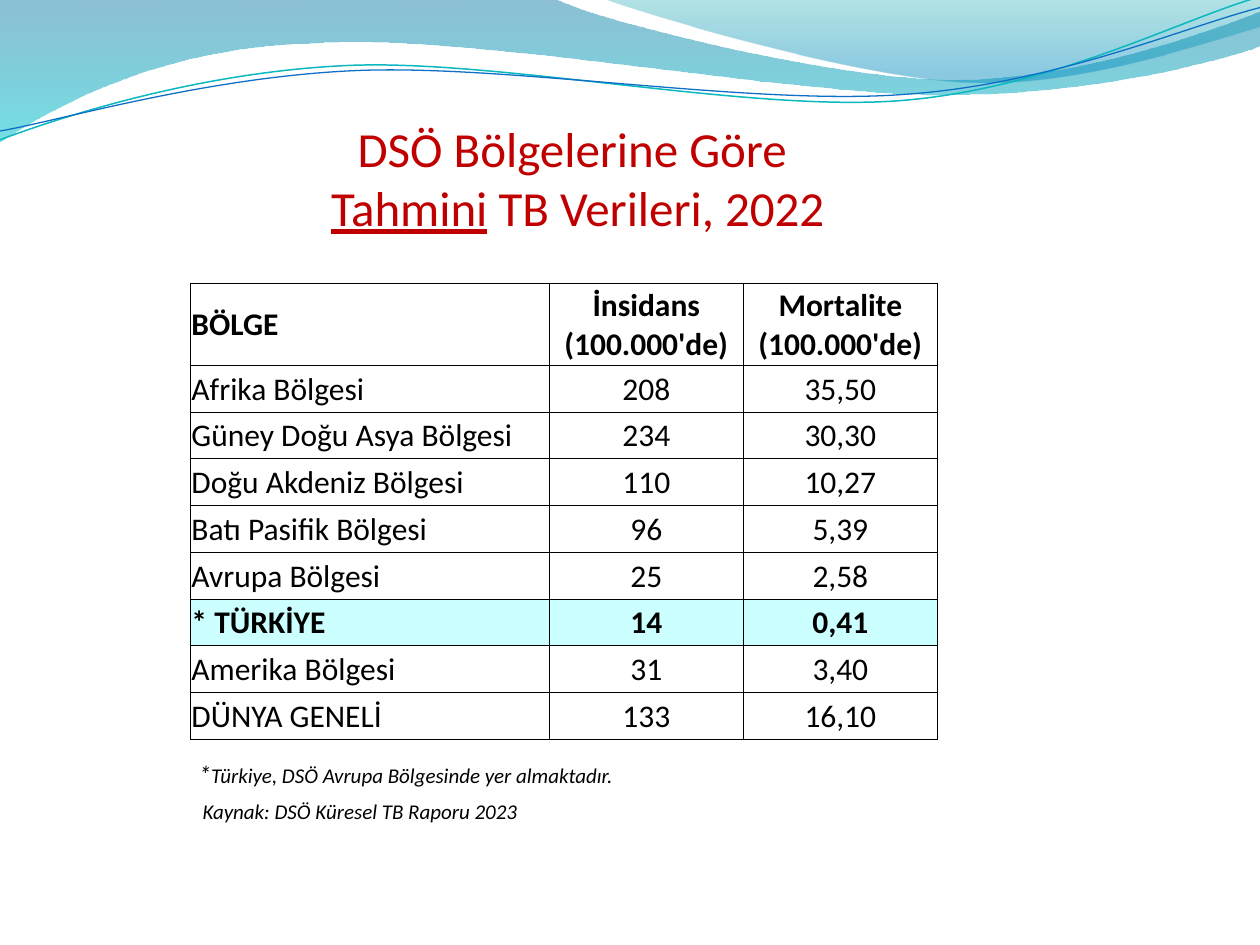
from dataclasses import dataclass
from math import cos, radians, sin

from lxml import etree
from pptx import Presentation
from pptx.dml.color import RGBColor
from pptx.enum.text import MSO_ANCHOR, MSO_AUTO_SIZE, PP_ALIGN
from pptx.oxml.ns import qn
from pptx.util import Inches, Pt

CENTER, LEFT, JUSTIFY = PP_ALIGN.CENTER, PP_ALIGN.LEFT, PP_ALIGN.JUSTIFY
MIDDLE = MSO_ANCHOR.MIDDLE
FIT_SHAPE, FIXED_SIZE = MSO_AUTO_SIZE.SHAPE_TO_FIT_TEXT, MSO_AUTO_SIZE.NONE
FONT = "Calibri"
BLACK = "000000"


@dataclass(frozen=True)
class Stop:
    position: float
    color: str
    opacity: int


@dataclass(frozen=True)
class Wave:
    box: tuple[float, float, float, float]
    segments: tuple[tuple[float, ...], ...]
    stops: tuple[Stop, ...] = ()
    line_color: str = ""
    line_width: float = 0
    rotation: float = 0


@dataclass(frozen=True)
class Note:
    left: float
    top: float
    width: float
    height: float
    runs: tuple[tuple[str, int], ...]
    alignment: PP_ALIGN
    line_spacing: float


WAVES = (
    Wave(
        (-0.01, -0.01, 10.02, 1.14),
        ((0, 0), (4.4, -0.01), (4.76, 0.17, 6.64, 0.63, 7.58, 0.63),
         (8.53, 0.63, 9.58, 0.26, 10, 0.09), (10.01, 0.36),
         (9.83, 0.44, 8.7, 0.76, 7.46, 0.75), (6.22, 0.75, 3.82, 0.28, 2.57, 0.34),
         (1.29, 0.36, 0.46, 0.83, -0.01, 1.13), (0, 0)),
        stops=(Stop(0, "0074A1", 45), Stop(1, "00C6CF", 55)),
    ),
    Wave(
        (4.79, -0.01, 5.21, 0.7),
        ((4.79, -0.01), (5.09, 0.11, 6.82, 0.62, 7.69, 0.65),
         (8.56, 0.69, 9.61, 0.32, 10, 0.21), (10, 0), (4.79, -0.01)),
        stops=(Stop(0, "00A1A9", 30), Stop(0.8, "008BBF", 45)),
    ),
    Wave(
        (-0.02, 0.22, 10.02, 0.71),
        ((0, 1.11), (0.48, 0.93, 1.58, 0.57, 2.77, 0.52),
         (3.95, 0.47, 5.93, 0.89, 7.13, 0.8), (8.33, 0.71, 9.38, 0.15, 9.98, -0.02)),
        line_color="0AB8BF", line_width=0.85, rotation=357.3,
    ),
    Wave(
        (-0.02, 0.3, 10.03, 0.58),
        ((0, 1.04), (0.47, 0.96, 1.64, 0.61, 2.83, 0.56),
         (4.03, 0.51, 5.97, 0.84, 7.17, 0.75), (8.36, 0.67, 9.41, 0.21, 10, 0.06)),
        line_color="0F6FC6", line_width=0.75, rotation=357.3,
    ),
)

NOTES = (
    Note(1.48, 5.94, 3.52, 0.36,
         (("*", 14), ("Türkiye, DSÖ Avrupa Bölgesinde yer almaktadır.", 12)), JUSTIFY, 1.15),
    Note(1.51, 6.29, 2.73, 0.3, (("Kaynak: DSÖ Küresel TB Raporu 2023", 12),), LEFT, 1),
)

REGION_ROWS = (
    ("BÖLGE", "İnsidans (100.000'de)", "Mortalite (100.000'de)"),
    ("Afrika Bölgesi", "208", "35,50"),
    ("Güney Doğu Asya Bölgesi", "234", "30,30"),
    ("Doğu Akdeniz Bölgesi", "110", "10,27"),
    ("Batı Pasifik Bölgesi", "96", "5,39"),
    ("Avrupa Bölgesi", "25", "2,58"),
    ("* TÜRKİYE", "14", "0,41"),
    ("Amerika Bölgesi", "31", "3,40"),
    ("DÜNYA GENELİ", "133", "16,10"),
)
HEADER_ROW, TURKEY_ROW = 0, 6
COLUMN_WIDTHS = (2.85, 1.54, 1.54)
TABLE_HEIGHT, HEADER_HEIGHT = 3.62, 0.65
REGION_HEIGHT = (TABLE_HEIGHT - HEADER_HEIGHT) / (len(REGION_ROWS) - 1)


def rgb(color: str) -> RGBColor:
    return RGBColor.from_string(color)


def format_font(font, size: float, color: str) -> None:
    font.name = FONT
    font.size = Pt(size)
    font.color.rgb = rgb(color)


def local_points(wave: Wave, segment: tuple[float, ...]) -> list[tuple[int, int]]:
    left, top, width, height = wave.box
    angle = radians(-wave.rotation)
    points = []
    for x, y in zip(segment[::2], segment[1::2]):
        across, down = x - left - width / 2, y - top - height / 2
        points.append((
            Inches(width / 2 + across * cos(angle) - down * sin(angle)),
            Inches(height / 2 + across * sin(angle) + down * cos(angle))))
    return points


def curve_outline(shape, outlines: list[list[tuple[int, int]]]) -> None:
    outline = next(shape.element.iter(qn("a:path")))
    outline.set("w", str(shape.width))
    outline.set("h", str(shape.height))
    for line, points in zip(outline.findall(qn("a:lnTo")), outlines[1:]):
        if len(points) == 3:
            line.tag = qn("a:cubicBezTo")
        for point in list(line):
            line.remove(point)
        for x, y in points:
            etree.SubElement(line, qn("a:pt"), x=str(x), y=str(y))
    start = outline.find(qn("a:moveTo"))[0]
    start.set("x", str(outlines[0][0][0]))
    start.set("y", str(outlines[0][0][1]))


def draw_wave(slide, wave: Wave) -> None:
    outlines = [local_points(wave, segment) for segment in wave.segments]
    vertices = [points[-1] for points in outlines]
    builder = slide.shapes.build_freeform(*vertices[0])
    builder.add_line_segments(vertices[1:], close=bool(wave.stops))
    shape = builder.convert_to_shape()
    shape.left, shape.top, shape.width, shape.height = map(Inches, wave.box)
    shape.rotation = wave.rotation
    curve_outline(shape, outlines)
    shape.shadow.inherit = False
    if not wave.stops:
        shape.fill.background()
        shape.line.color.rgb = rgb(wave.line_color)
        shape.line.width = Pt(wave.line_width)
        return
    shape.line.fill.background()
    shape.fill.gradient()
    shape.fill.gradient_angle = 270
    for gradient_stop, stop in zip(shape.fill.gradient_stops, wave.stops):
        gradient_stop.position = stop.position
        gradient_stop.color.rgb = rgb(stop.color)
    for color, stop in zip(shape.element.iter(qn("a:srgbClr")), wave.stops):
        etree.SubElement(color, qn("a:alpha"), val=str(stop.opacity * 1000))


def draw_title(slide) -> None:
    title = slide.shapes.title
    title.left, title.top, title.width, title.height = map(Inches, (0, 0.94, 9.17, 0.89))
    frame = title.text_frame
    frame.margin_left = frame.margin_right = frame.margin_bottom = 0
    frame.margin_top = Inches(0.05)
    frame.vertical_anchor = MIDDLE
    frame.auto_size = FIXED_SIZE
    paragraph = frame.paragraphs[0]
    paragraph.alignment = CENTER
    format_font(paragraph.font, 28, "C00000")
    paragraph.add_run().text = "DSÖ Bölgelerine Göre "
    paragraph.add_line_break()
    estimated = paragraph.add_run()
    estimated.text = "Tahmini"
    estimated.font.underline = True
    paragraph.add_run().text = " TB Verileri, 2022"


def draw_borders(cell) -> None:
    properties = cell._tc.get_or_add_tcPr()
    for side in ("a:lnL", "a:lnR", "a:lnT", "a:lnB"):
        line = etree.SubElement(properties, qn(side), w=str(Pt(0.5)))
        fill = etree.SubElement(line, qn("a:solidFill"))
        etree.SubElement(fill, qn("a:srgbClr"), val=BLACK)


def draw_table(slide) -> None:
    table = slide.shapes.add_table(
        len(REGION_ROWS), len(COLUMN_WIDTHS), Inches(1.51), Inches(2.25),
        Inches(sum(COLUMN_WIDTHS)), Inches(TABLE_HEIGHT)).table
    table.first_row = table.horz_banding = False
    for column, width in zip(table.columns, COLUMN_WIDTHS):
        column.width = Inches(width)
    for row_index, values in enumerate(REGION_ROWS):
        height = HEADER_HEIGHT if row_index == HEADER_ROW else REGION_HEIGHT
        table.rows[row_index].height = Inches(height)
        for column_index, value in enumerate(values):
            cell = table.cell(row_index, column_index)
            cell.margin_left = cell.margin_right = cell.margin_top = Inches(0.01)
            cell.margin_bottom = 0
            cell.vertical_anchor = MIDDLE
            draw_borders(cell)
            if row_index == TURKEY_ROW:
                cell.fill.solid()
                cell.fill.fore_color.rgb = rgb("CCFFFF")
            else:
                cell.fill.background()
            cell.text = value
            paragraph = cell.text_frame.paragraphs[0]
            paragraph.alignment = CENTER if column_index else LEFT
            format_font(paragraph.font, 18, BLACK)
            paragraph.font.bold = row_index in (HEADER_ROW, TURKEY_ROW)


def draw_note(slide, note: Note) -> None:
    box = map(Inches, (note.left, note.top, note.width, note.height))
    frame = slide.shapes.add_textbox(*box).text_frame
    frame.word_wrap = False
    frame.auto_size = FIT_SHAPE
    paragraph = frame.paragraphs[0]
    paragraph.alignment = note.alignment
    paragraph.line_spacing = note.line_spacing
    for text, size in note.runs:
        run = paragraph.add_run()
        run.text = text
        format_font(run.font, size, BLACK)
        run.font.italic = True


def main() -> None:
    presentation = Presentation()
    presentation.slide_width, presentation.slide_height = Inches(10), Inches(7.5)
    slide = presentation.slides.add_slide(presentation.slide_layouts[5])
    for wave in WAVES:
        draw_wave(slide, wave)
    draw_title(slide)
    draw_table(slide)
    for note in NOTES:
        draw_note(slide, note)
    presentation.save("out.pptx")


if __name__ == "__main__":
    main()
